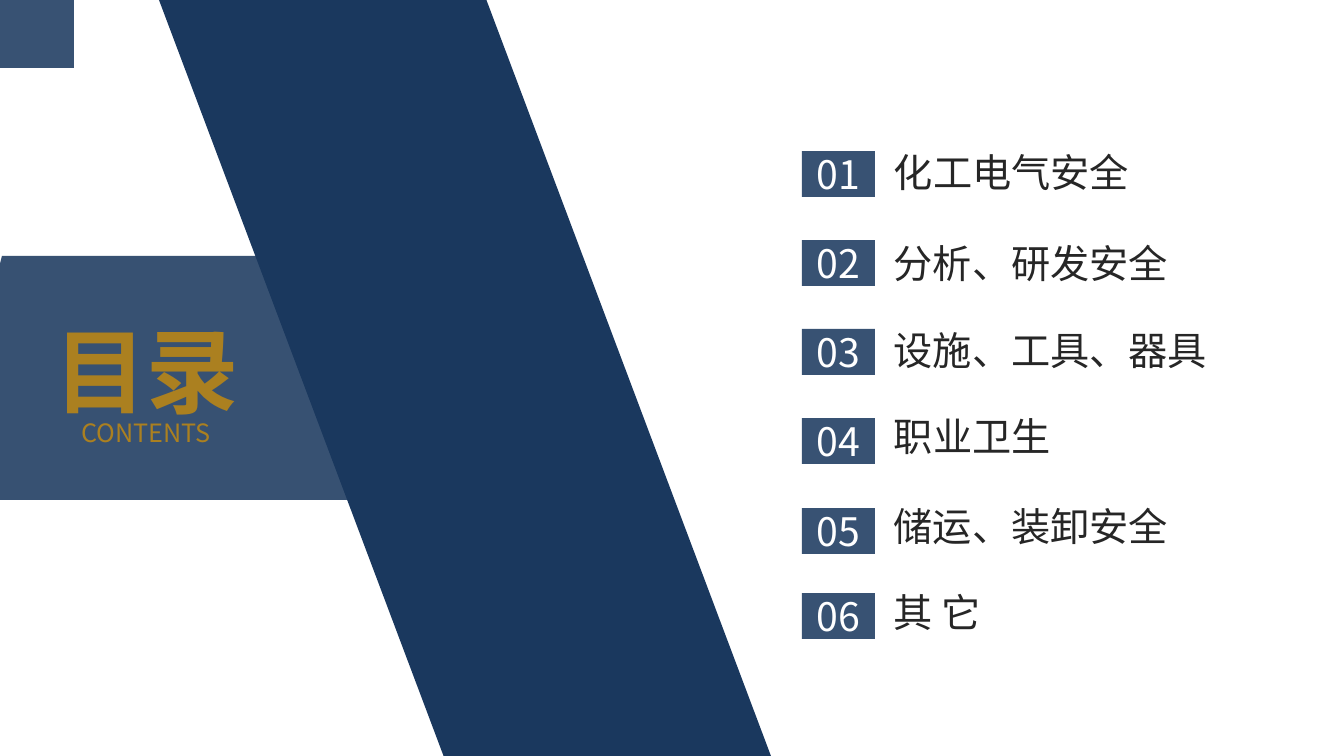
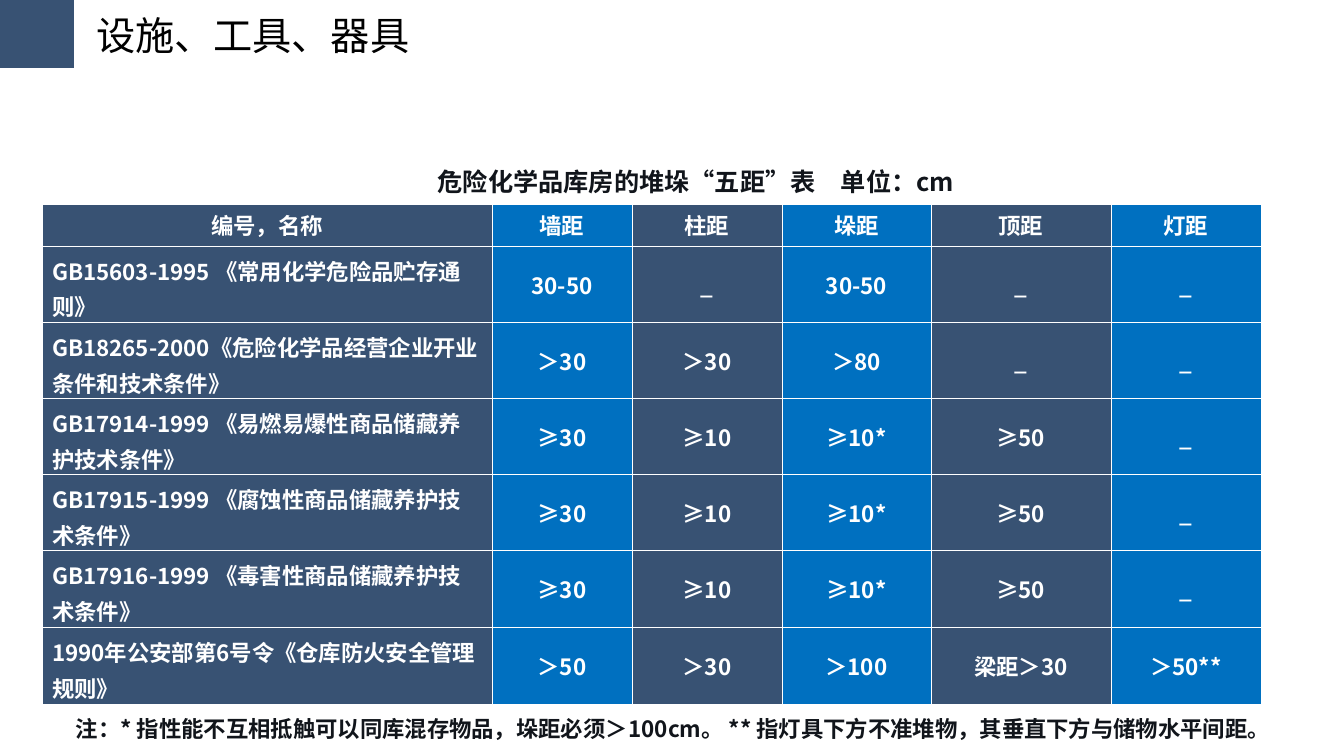
from lxml.etree import SubElement
from pptx import Presentation
from pptx.dml.color import RGBColor
from pptx.enum.shapes import MSO_SHAPE
from pptx.enum.text import MSO_ANCHOR, MSO_AUTO_SIZE, PP_ALIGN
from pptx.oxml import parse_xml
from pptx.oxml.ns import nsdecls, qn
from pptx.util import Pt

SLIDE_W, SLIDE_H = 1344, 756
EMU_PER_PX = 12192000 / SLIDE_W
FONT = "Noto Sans CJK SC"
TITLE_ONLY = 5
COLORS = {
    "navy": "1A385E",
    "slate": "385273",
    "blue": "0070C0",
    "gold": "AB8020",
    "ink": "262626",
    "note": "11151B",
    "black": "000000",
    "white": "FFFFFF",
}


def px(length):
    return round(length * EMU_PER_PX)


def box(left, top, width, height):
    return px(left), px(top), px(width), px(height)


def color(name):
    return RGBColor.from_string(COLORS[name])


def write(frame, text, size=16, ink="white", bold=False, align=PP_ALIGN.LEFT,
          spacing=None):
    """Put one formatted paragraph into a text frame."""
    paragraph = frame.paragraphs[0]
    paragraph.alignment = align
    paragraph.space_before = Pt(0)
    if spacing:
        paragraph.line_spacing = spacing
    run = paragraph.add_run()
    run.text = text
    run.font.size = Pt(size)
    run.font.bold = bold
    run.font.color.rgb = color(ink)
    run.font.name = FONT
    SubElement(run.font._element, qn("a:ea"), typeface=FONT)


class Deck:
    """Holds the shared style and the slide being built."""

    def __init__(self):
        self.prs = Presentation()
        self.prs.slide_width, self.prs.slide_height = px(SLIDE_W), px(SLIDE_H)
        self.slide = None

    def new_slide(self):
        layout = self.prs.slide_layouts[TITLE_ONLY]
        self.slide = self.prs.slides.add_slide(layout)
        self.shape(MSO_SHAPE.RECTANGLE, -1, -2, 75, 70, "slate")

    def shape(self, preset, left, top, width, height, fill, opacity=None):
        shape = self.slide.shapes.add_shape(preset, *box(left, top, width, height))
        shape.shadow.inherit = False
        shape.fill.solid()
        shape.fill.fore_color.rgb = color(fill)
        shape.line.fill.background()
        if opacity is not None:
            rgb = shape.element.spPr.find(f"{qn('a:solidFill')}/{qn('a:srgbClr')}")
            SubElement(rgb, qn("a:alpha"), val=str(opacity * 1000))
        return shape

    def title(self, text, left, top, width, height, **style):
        title = self.slide.shapes.title
        title.left, title.top, title.width, title.height = box(
            left, top, width, height)
        self.fill_frame(title.text_frame, text, False, **style)
        # Bring the title in front of the bands
        tree = title.element.getparent()
        tree.append(title.element)

    def text(self, text, left, top, width, height, wrap=True, **style):
        area = self.slide.shapes.add_textbox(*box(left, top, width, height))
        self.fill_frame(area.text_frame, text, wrap, **style)

    def fill_frame(self, frame, text, wrap, **style):
        frame.auto_size = MSO_AUTO_SIZE.NONE
        frame.word_wrap = wrap
        frame.vertical_anchor = MSO_ANCHOR.TOP
        write(frame, text, **style)

    def badge(self, text, left, top, width, height):
        badge = self.shape(MSO_SHAPE.RECTANGLE, left, top, width, height, "slate")
        badge.text_frame.word_wrap = False
        badge.text_frame.vertical_anchor = MSO_ANCHOR.MIDDLE
        write(badge.text_frame, text, size=28, align=PP_ALIGN.CENTER)

    def table(self, rows, left, top, widths, heights):
        table = self.slide.shapes.add_table(
            len(rows), len(widths),
            *box(left, top, sum(widths), sum(heights))).table
        table.horz_banding = False
        for column, width in zip(table.columns, widths):
            column.width = px(width)
        for row, height in zip(table.rows, heights):
            row.height = px(height)
        for r, values in enumerate(rows):
            for c, value in enumerate(values):
                self.cell(table.cell(r, c), value, "blue" if c % 2 else "slate",
                          is_name=r > 0 and c == 0)

    def cell(self, cell, text, fill, is_name):
        cell.fill.solid()
        cell.fill.fore_color.rgb = color(fill)
        if is_name:
            cell.vertical_anchor = MSO_ANCHOR.TOP
            cell.margin_bottom = 0
            write(cell.text_frame, text, bold=True, spacing=1.1)
        else:
            cell.vertical_anchor = MSO_ANCHOR.MIDDLE
            write(cell.text_frame, text, bold=True, align=PP_ALIGN.CENTER)
        # Thin white borders go ahead of the fill
        properties = cell._tc.get_or_add_tcPr()
        for i, side in enumerate("LRTB"):
            properties.insert(i, parse_xml(
                f'<a:ln{side} {nsdecls("a")} w="{Pt(0.5)}"><a:solidFill>'
                f'<a:srgbClr val="{COLORS["white"]}"/></a:solidFill></a:ln{side}>'))


# Label, badge top, label top, label width
CONTENTS = [
    ("化工电气安全", 151, 143, 258),
    ("分析、研发安全", 240, 234, 297),
    ("设施、工具、器具", 329, 321, 337),
    ("职业卫生", 418, 407, 178),
    ("储运、装卸安全", 508, 497, 297),
    ("其 它", 593, 583, 111),
]

DISTANCES = [
    ("编号，名称", "墙距", "柱距", "垛距", "顶距", "灯距"),
    ("GB15603-1995 《常用化学危险品贮存通则》", "30-50", "_", "30-50", "_", "_"),
    ("GB18265-2000《危险化学品经营企业开业条件和技术条件》",
     "＞30", "＞30", "＞80", "_", "_"),
    ("GB17914-1999 《易燃易爆性商品储藏养护技术条件》",
     "≥30", "≥10", "≥10*", "≥50", "_"),
    ("GB17915-1999 《腐蚀性商品储藏养护技术条件》",
     "≥30", "≥10", "≥10*", "≥50", "_"),
    ("GB17916-1999 《毒害性商品储藏养护技术条件》",
     "≥30", "≥10", "≥10*", "≥50", "_"),
    ("1990年公安部第6号令《仓库防火安全管理规则》",
     "＞50", "＞30", "＞100", "梁距＞30", "＞50**"),
]


def contents_slide(deck):
    deck.new_slide()
    # Diagonal band and heading panel
    diagonal = deck.shape(MSO_SHAPE.PARALLELOGRAM, 159, 0, 612, SLIDE_H, "navy")
    diagonal.adjustments[0] = 0.465
    diagonal.element.spPr.find(qn("a:xfrm")).set("flipH", "1")
    deck.shape(MSO_SHAPE.PARALLELOGRAM, -59, 256, 484, 244, "navy", opacity=87)

    # Numbered chapters
    for number, (label, badge_top, label_top, width) in enumerate(CONTENTS, 1):
        deck.badge(f"{number:02}", 802, badge_top, 73, 46)
        deck.text(label, 884, label_top, width, 57, wrap=False, size=28, ink="ink")

    # Heading
    heading = dict(ink="gold", align=PP_ALIGN.CENTER, spacing=1.3)
    deck.title("目录", 43, 276, 207, 141, size=66, bold=True, **heading)
    deck.text("CONTENTS", 65, 403, 162, 46, size=18, **heading)


def distances_slide(deck):
    deck.new_slide()
    deck.title("设施、工具、器具", 86, 6, 337, 57, size=28, ink="black")

    # Table with caption and footnote
    deck.table(DISTANCES, 42, 204, widths=[450, 140, 150, 149, 180, 150],
               heights=[42, 76, 71, 72, 76, 77, 77])
    deck.text("危险化学品库房的堆垛“五距”表　单位：cm", 198, 161, 996, 40,
              size=18, ink="note", bold=True, align=PP_ALIGN.CENTER)
    deck.text("注：* 指性能不互相抵触可以同库混存物品，垛距必须＞100cm。 "
              "** 指灯具下方不准堆物，其垂直下方与储物水平间距。",
              66, 706, 1277, 39, ink="note", bold=True, spacing=1.15)


def main():
    deck = Deck()
    contents_slide(deck)
    distances_slide(deck)
    deck.prs.save("out.pptx")


if __name__ == "__main__":
    main()
